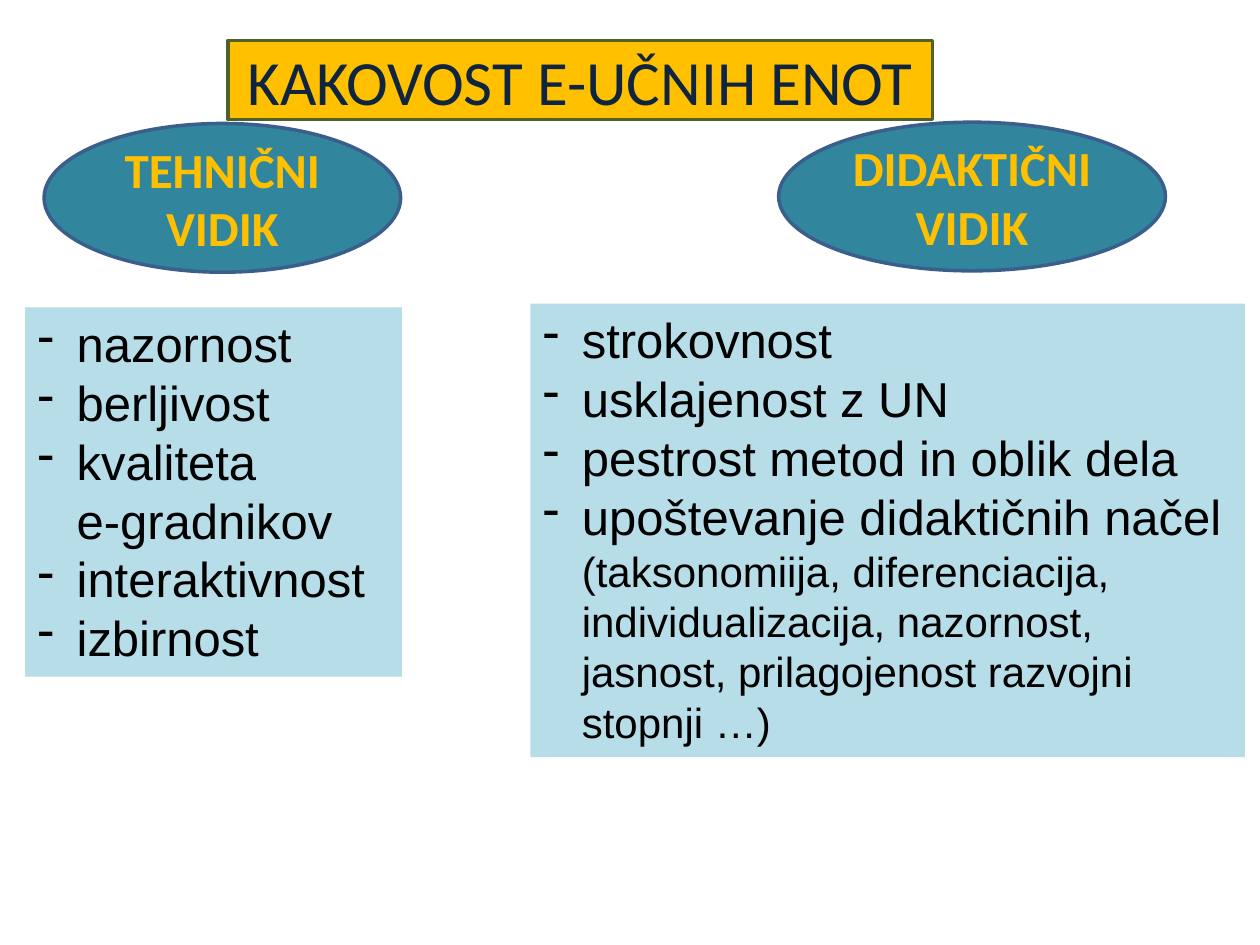
from lxml.etree import SubElement
from pptx import Presentation
from pptx.dml.color import RGBColor
from pptx.enum.shapes import MSO_SHAPE as Shape
from pptx.enum.text import MSO_ANCHOR as Anchor, MSO_AUTO_SIZE as AutoSize, PP_ALIGN as Align
from pptx.oxml.ns import qn
from pptx.util import Inches, Pt

WIDTH, HEIGHT = Inches(10), Inches(7.5)
INDENT = Inches(0.31)
GOLD, TEAL, PALE_BLUE = "FFC000", "31859C", "B7DEE8"

TECHNICAL = [
    [("nazornost", 28)],
    [("berljivost", 28)],
    [("kvaliteta", 28)],
    [("e-gradnikov", 28)],
    [("interaktivnost", 28)],
    [("izbirnost", 28)],
]
DIDACTIC = [
    [("strokovnost", 28)],
    [("usklajenost z UN", 28)],
    [("pestrost metod in oblik dela", 28)],
    [("upoštevanje didaktičnih načel ", 28),
     ("(taksonomiija, diferenciacija, individualizacija, nazornost, "
      "jasnost, prilagojenost razvojni stopnji …)", 24)],
]


def color(value):
    return RGBColor.from_string(value)


def add_panel(slide, kind, box, fill, line=None):
    left, top, width, height = box
    shape = slide.shapes.add_shape(
        kind, int(WIDTH * left / 100), int(HEIGHT * top / 100),
        int(WIDTH * width / 100), int(HEIGHT * height / 100))
    shape.shadow.inherit = False
    shape.fill.solid()
    shape.fill.fore_color.rgb = color(fill)
    if line:
        shape.line.color.rgb = color(line)
        shape.line.width = Pt(2)
    else:
        shape.line.fill.background()
    shape.text_frame.word_wrap = True
    return shape


def add_run(paragraph, text, size, font, ink, bold=False):
    run = paragraph.add_run()
    run.text = text
    run.font.size = Pt(size)
    run.font.name = font
    run.font.bold = bold
    run.font.color.rgb = color(ink)


def add_heading(slide, kind, box, text, size, fill, line, ink, bold=False):
    frame = add_panel(slide, kind, box, fill, line).text_frame
    frame.vertical_anchor = Anchor.MIDDLE
    paragraph = frame.paragraphs[0]
    paragraph.alignment = Align.CENTER
    add_run(paragraph, text, size, "Calibri", ink, bold)


def set_indent(paragraph, bulleted):
    properties = paragraph._p.get_or_add_pPr()
    properties.set("marL", str(INDENT))
    properties.set("indent", str(-INDENT if bulleted else 0))
    if bulleted:
        SubElement(properties, qn("a:buChar")).set("char", "-")


def add_list(slide, box, items, continuations=()):
    frame = add_panel(slide, Shape.RECTANGLE, box, PALE_BLUE).text_frame
    frame.vertical_anchor = Anchor.TOP
    frame.auto_size = AutoSize.SHAPE_TO_FIT_TEXT
    for index, runs in enumerate(items):
        paragraph = frame.add_paragraph() if index else frame.paragraphs[0]
        paragraph.alignment = Align.LEFT
        set_indent(paragraph, index not in continuations)
        for text, size in runs:
            add_run(paragraph, text, size, "Arial", "000000")


def add_aspect(slide, oval_box, title, list_box, items, continuations=()):
    add_heading(slide, Shape.OVAL, oval_box, title, 28, TEAL, "3A5F8C", GOLD, True)
    add_list(slide, list_box, items, continuations)


def main():
    presentation = Presentation()
    presentation.slide_width, presentation.slide_height = WIDTH, HEIGHT
    slide = presentation.slides.add_slide(presentation.slide_layouts[6])
    add_heading(slide, Shape.RECTANGLE, (18.1, 4.27, 55.9, 8.4),
                "KAKOVOST E-UČNIH ENOT", 36, GOLD, "4F6228", "0F243E")
    add_aspect(slide, (3.5, 13.07, 28.3, 15.73), "TEHNIČNI VIDIK",
               (2, 32.53, 29.9, 39.07), TECHNICAL, continuations=(3,))
    add_aspect(slide, (61.8, 12.93, 30.7, 15.73), "DIDAKTIČNI VIDIK",
               (42.1, 32.13, 56.7, 48), DIDACTIC)
    presentation.save("out.pptx")


if __name__ == "__main__":
    main()
